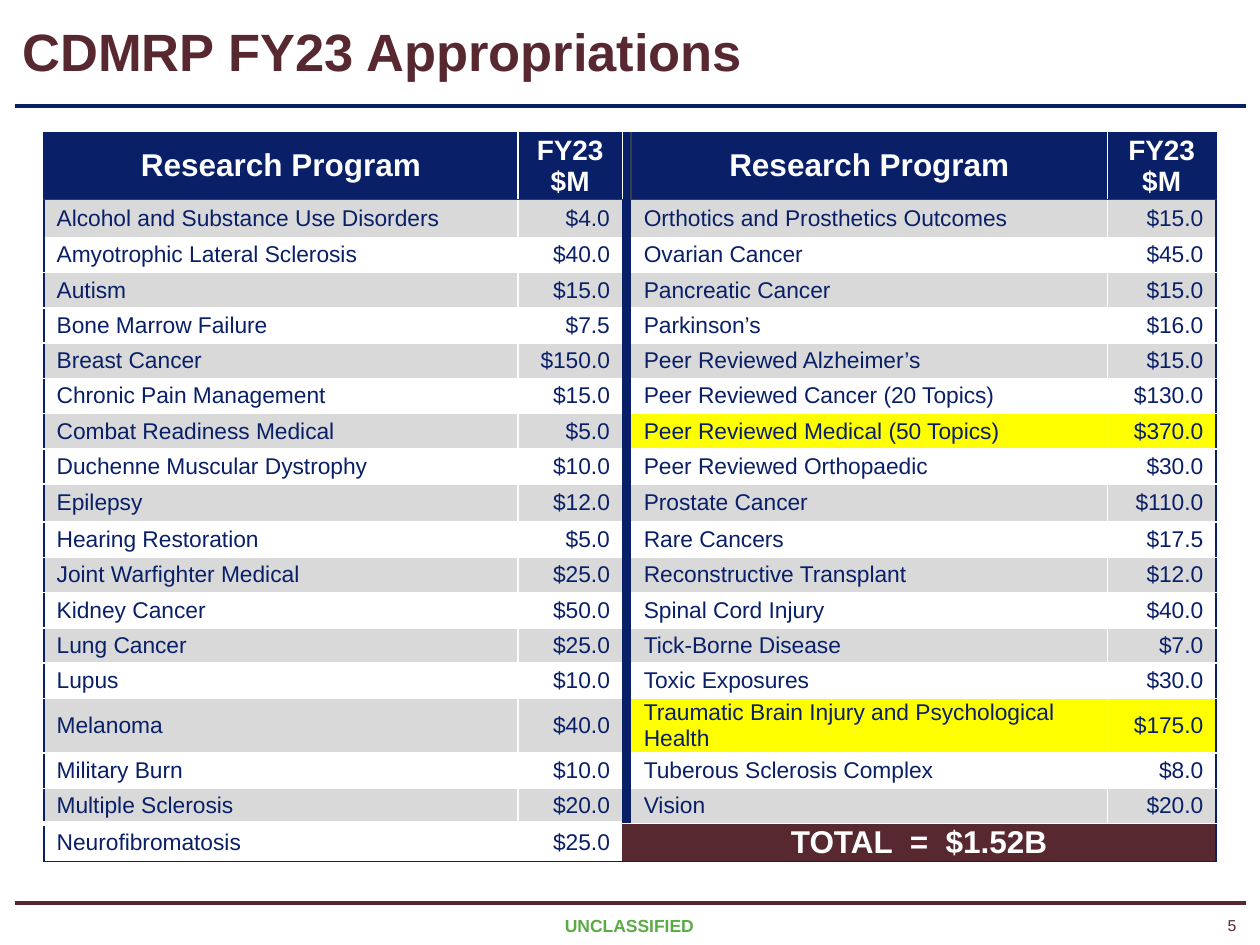
from lxml.etree import SubElement
from pptx import Presentation
from pptx.dml.color import RGBColor
from pptx.enum.shapes import MSO_CONNECTOR
from pptx.enum.text import MSO_ANCHOR as Anchor, PP_ALIGN as Align
from pptx.oxml.ns import qn
from pptx.util import Inches, Pt

NAVY = RGBColor(0x09, 0x20, 0x68)
MAROON = RGBColor(0x58, 0x28, 0x31)
GREEN = RGBColor(0x5A, 0xAB, 0x46)
SLATE = RGBColor(0x33, 0x3F, 0x50)
GRAY = RGBColor(0xD9, 0xD9, 0xD9)
YELLOW = RGBColor(0xFF, 0xFF, 0x00)
WHITE = RGBColor(0xFF, 0xFF, 0xFF)

# Left program, its amount, right program, its amount
PROGRAMS = [
    ("Alcohol and Substance Use Disorders", "$4.0", "Orthotics and Prosthetics Outcomes", "$15.0"),
    ("Amyotrophic Lateral Sclerosis", "$40.0", "Ovarian Cancer", "$45.0"),
    ("Autism", "$15.0", "Pancreatic Cancer", "$15.0"),
    ("Bone Marrow Failure", "$7.5", "Parkinson’s", "$16.0"),
    ("Breast Cancer", "$150.0", "Peer Reviewed Alzheimer’s", "$15.0"),
    ("Chronic Pain Management", "$15.0", "Peer Reviewed Cancer (20 Topics)", "$130.0"),
    ("Combat Readiness Medical", "$5.0", "Peer Reviewed Medical (50 Topics)", "$370.0"),
    ("Duchenne Muscular Dystrophy", "$10.0", "Peer Reviewed Orthopaedic", "$30.0"),
    ("Epilepsy", "$12.0", "Prostate Cancer", "$110.0"),
    ("Hearing Restoration", "$5.0", "Rare Cancers", "$17.5"),
    ("Joint Warfighter Medical", "$25.0", "Reconstructive Transplant", "$12.0"),
    ("Kidney Cancer", "$50.0", "Spinal Cord Injury", "$40.0"),
    ("Lung Cancer", "$25.0", "Tick-Borne Disease", "$7.0"),
    ("Lupus", "$10.0", "Toxic Exposures", "$30.0"),
    ("Melanoma", "$40.0", "Traumatic Brain Injury and Psychological Health", "$175.0"),
    ("Military Burn", "$10.0", "Tuberous Sclerosis Complex", "$8.0"),
    ("Multiple Sclerosis", "$20.0", "Vision", "$20.0"),
]
LAST_PROGRAM = ("Neurofibromatosis", "$25.0")
TOTAL = "TOTAL  =  $1.52B"
HIGHLIGHTED_ROWS = (7, 15)
COLUMN_WIDTHS = (3.76, 0.83, 0.07, 3.78, 0.86)
AMOUNT_COLUMNS = (1, 4)
DIVIDER = 2
TOTAL_ROW = len(PROGRAMS) + 1
ROW_HEIGHT = 0.28
TALL_ROWS = {0: 0.5, 1: 0.3, 9: 0.3, 15: 0.4, TOTAL_ROW: 0.29}

# Colours of the vertical rules, from the table's left edge to its right edge
HEADER_RULES = (NAVY, WHITE, WHITE, SLATE, WHITE, NAVY)
BODY_RULES = (NAVY, WHITE, None, None, WHITE, NAVY)


def write(frame, text, size=13, color=NAVY, bold=False, align=Align.LEFT, spacing=None):
    paragraph = frame.paragraphs[0]
    paragraph.alignment = align
    if spacing:
        paragraph.line_spacing = spacing
    run = paragraph.add_run()
    run.text = text
    font = run.font
    font.name, font.size, font.bold = "Arial", Pt(size), bold
    font.color.rgb = color


def horizontal_rule(edge, column):
    """Colour of the rule above row number edge, or None."""
    if edge in (0, TOTAL_ROW + 1):
        return NAVY
    if edge == 2 or (column == DIVIDER and edge < TOTAL_ROW):
        return None
    return SLATE if edge == 1 else WHITE


def set_borders(cell, row, column, span=1):
    rules = BODY_RULES if row else HEADER_RULES
    colors = {
        "a:lnL": rules[column],
        "a:lnR": rules[column + span],
        "a:lnT": horizontal_rule(row, column),
        "a:lnB": horizontal_rule(row + 1, column),
    }
    properties = cell._tc.get_or_add_tcPr()
    for side, color in colors.items():
        thick = side == "a:lnT" and row == TOTAL_ROW and column < DIVIDER
        line = SubElement(properties, qn(side), w=str(Pt(3 if thick else 1)))
        if color is None:
            SubElement(line, qn("a:noFill"))
        else:
            fill = SubElement(line, qn("a:solidFill"))
            SubElement(fill, qn("a:srgbClr"), val=str(color))


def set_insets(cell, side):
    cell.margin_left = cell.margin_right = Inches(side)
    cell.margin_top = cell.margin_bottom = 0


def leave_empty(cell):
    """Keep an empty cell from stretching its row."""
    set_insets(cell, 0)
    SubElement(cell.text_frame.paragraphs[0]._p, qn("a:endParaRPr"), sz="800")


class SlideBuilder:
    def __init__(self, slide):
        self.slide = slide

    def text(self, left, top, width, height, text, anchor=Anchor.TOP, **style):
        box = self.slide.shapes.add_textbox(
            Inches(left), Inches(top), Inches(width), Inches(height))
        box.text_frame.word_wrap = True
        box.text_frame.vertical_anchor = anchor
        write(box.text_frame, text, **style)

    def rule(self, y, color):
        line = self.slide.shapes.add_connector(
            MSO_CONNECTOR.STRAIGHT, Inches(0.12), Inches(y), Inches(9.89), Inches(y))
        line.line.color.rgb = color
        line.line.width = Pt(2.25)
        SubElement(line._element.spPr, qn("a:effectLst"))

    def table(self, left, top):
        heights = [TALL_ROWS.get(row, ROW_HEIGHT) for row in range(TOTAL_ROW + 1)]
        table = self.slide.shapes.add_table(
            len(heights), len(COLUMN_WIDTHS), Inches(left), Inches(top),
            Inches(sum(COLUMN_WIDTHS)), Inches(sum(heights))).table
        table.first_row = table.horz_banding = False
        for column, width in zip(table.columns, COLUMN_WIDTHS):
            column.width = Inches(width)
        for row, height in zip(table.rows, heights):
            row.height = Inches(height)
        return table

    def cell(self, table, row, column, text, fill, span=1, inset=0.1, **style):
        cell = table.cell(row, column)
        if span > 1:
            cell.merge(table.cell(row, column + span - 1))
            for hidden in range(column + 1, column + span):
                leave_empty(table.cell(row, hidden))
        set_borders(cell, row, column, span)
        cell.fill.solid()
        cell.fill.fore_color.rgb = fill
        cell.vertical_anchor = Anchor.MIDDLE
        if text:
            set_insets(cell, inset)
            write(cell.text_frame, text, **style)
        else:
            leave_empty(cell)


def add_appropriations(builder):
    table = builder.table(0.35, 1.05)
    heading = dict(color=WHITE, bold=True, align=Align.CENTER)

    for column in range(len(COLUMN_WIDTHS)):
        is_amount = column in AMOUNT_COLUMNS
        title = "FY23 $M" if is_amount else "Research Program"
        builder.cell(table, 0, column, "" if column == DIVIDER else title, NAVY,
                     size=16 if is_amount else 18, **heading)

    body = [(*entry[:2], "", *entry[2:]) for entry in PROGRAMS] + [LAST_PROGRAM]
    for row, values in enumerate(body, start=1):
        for column, value in enumerate(values):
            if column == DIVIDER:
                fill = NAVY
            elif column > DIVIDER and row in HIGHLIGHTED_ROWS:
                fill = YELLOW
            else:
                fill = GRAY if row % 2 else WHITE
            align = Align.RIGHT if column in AMOUNT_COLUMNS else Align.LEFT
            builder.cell(table, row, column, value, fill, align=align)

    builder.cell(table, TOTAL_ROW, DIVIDER, TOTAL, MAROON, span=3, inset=0,
                 size=18, **heading)


def main():
    deck = Presentation()
    deck.slide_width, deck.slide_height = Inches(10), Inches(7.5)
    builder = SlideBuilder(deck.slides.add_slide(deck.slide_layouts[6]))

    builder.text(4.33, 7.21, 1.33, 0.27, "UNCLASSIFIED",
                 size=10, color=GREEN, bold=True, align=Align.CENTER)
    builder.rule(0.84, NAVY)
    builder.text(9.4, 7.22, 0.51, 0.25, "5", size=9, color=MAROON, align=Align.RIGHT)
    builder.rule(7.17, MAROON)
    builder.text(0.08, 0.07, 7.53, 0.76, "CDMRP FY23 Appropriations",
                 anchor=Anchor.MIDDLE, size=30, color=MAROON, bold=True, spacing=0.8)
    add_appropriations(builder)

    deck.save("out.pptx")


if __name__ == "__main__":
    main()
